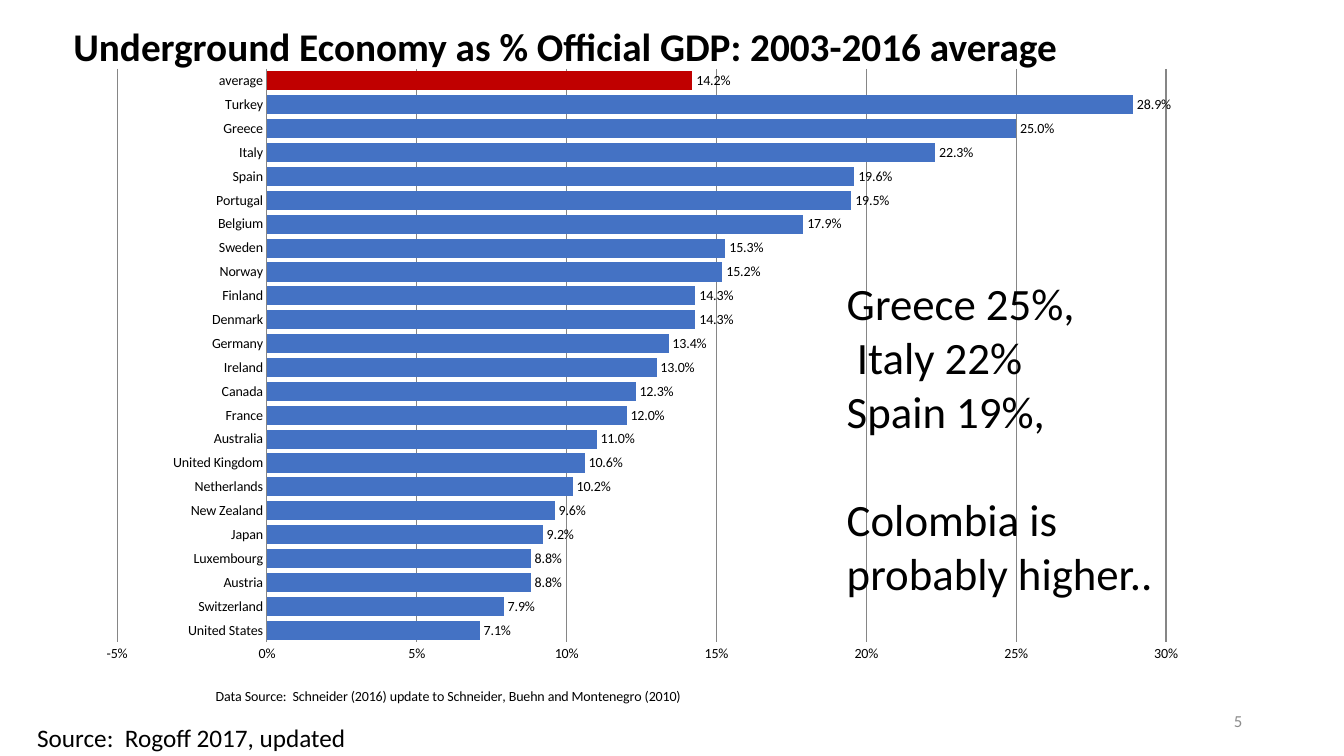
"""Build the slide on the underground economy as a share of official GDP."""
import dataclasses

import lxml.etree
import pptx
import pptx.chart.data
import pptx.dml.color
import pptx.enum.chart
import pptx.enum.text
import pptx.oxml.ns
import pptx.util

SHARES = {
    "United States": 0.071, "Switzerland": 0.079, "Austria": 0.088,
    "Luxembourg": 0.088, "Japan": 0.092, "New Zealand": 0.096,
    "Netherlands": 0.102, "United Kingdom": 0.106, "Australia": 0.11,
    "France": 0.12, "Canada": 0.123, "Ireland": 0.13, "Germany": 0.134,
    "Denmark": 0.143, "Finland": 0.143, "Norway": 0.152, "Sweden": 0.153,
    "Belgium": 0.179, "Portugal": 0.195, "Spain": 0.196, "Italy": 0.223,
    "Greece": 0.25, "Turkey": 0.289, "average": 0.142,
}


@dataclasses.dataclass(frozen=True)
class Theme:
    font: str = "Calibri"
    ink: str = "000000"
    muted: str = "8C8C8C"
    grid: str = "868686"
    bar: str = "4472C4"
    highlight: str = "C00000"
    heading: int = 28
    remark: int = 32
    source: int = 18
    number: int = 12
    chart: int = 10


def rgb(value):
    return pptx.dml.color.RGBColor.from_string(value)


def px(length):
    return pptx.util.Emu(length * 9144)


def format_font(font, theme, size, color, bold=False):
    font.name = theme.font
    font.size = pptx.util.Pt(size)
    font.color.rgb = rgb(color)
    font.bold = bold


def write(paragraph, text, theme, size, color=None, bold=False, align=None, before=0):
    run = paragraph.add_run()
    run.text = text
    format_font(run.font, theme, size, color or theme.ink, bold)
    paragraph.alignment = align
    paragraph.space_before = pptx.util.Pt(before)


def place(parent, index, **measures):
    qn = pptx.oxml.ns.qn
    for old in parent.findall(qn("c:layout")):
        parent.remove(old)
    layout = lxml.etree.Element(qn("c:layout"))
    manual = lxml.etree.SubElement(layout, qn("c:manualLayout"))
    for tag, value in measures.items():
        lxml.etree.SubElement(manual, qn(f"c:{tag}")).set("val", str(value))
    parent.insert(index, layout)


class SlideBuilder:
    def __init__(self, slide, theme):
        self.slide = slide
        self.theme = theme

    def text(self, box, lines, wrap=True, anchor=pptx.enum.text.MSO_ANCHOR.TOP, **style):
        frame = self.slide.shapes.add_textbox(*map(px, box)).text_frame
        frame.word_wrap = wrap
        frame.vertical_anchor = anchor
        for index, (line, before) in enumerate(lines):
            paragraph = frame.add_paragraph() if index else frame.paragraphs[0]
            write(paragraph, line, self.theme, before=before, **style)

    def bars(self, box, shares, caption):
        theme = self.theme
        data = pptx.chart.data.CategoryChartData(number_format="0.0%")
        data.categories = list(shares)
        data.add_series("Series 1", list(shares.values()))
        kind = pptx.enum.chart.XL_CHART_TYPE.BAR_CLUSTERED
        chart = self.slide.shapes.add_chart(kind, *map(px, box), data).chart
        format_font(chart.font, theme, theme.chart, theme.ink)
        chart.has_legend = False
        chart.has_title = False
        self.plot(chart.plots[0], list(shares).index("average"))
        self.axes(chart, caption)
        place(chart.value_axis._element.getparent(), 0, layoutTarget="inner",
              xMode="edge", yMode="edge", x=0.029, y=0.019, w=0.939, h=0.867)

    def plot(self, plot, highlighted):
        theme = self.theme
        plot.gap_width = 25
        plot.overlap = -25
        plot.vary_by_categories = False
        series = plot.series[0]
        series.invert_if_negative = False
        for part, color in ((series, theme.bar),
                            (series.points[highlighted], theme.highlight)):
            part.format.fill.solid()
            part.format.fill.fore_color.rgb = rgb(color)
        labels = series.data_labels
        labels.show_value = True
        labels.number_format = "0.0%"
        labels.number_format_is_linked = False
        labels.position = pptx.enum.chart.XL_LABEL_POSITION.OUTSIDE_END
        format_font(labels.font, theme, theme.chart, theme.ink)

    def axes(self, chart, caption):
        theme = self.theme
        countries, percent = chart.category_axis, chart.value_axis
        for axis in (countries, percent):
            axis.major_tick_mark = pptx.enum.chart.XL_TICK_MARK.NONE
            axis.minor_tick_mark = pptx.enum.chart.XL_TICK_MARK.NONE
            format_font(axis.tick_labels.font, theme, theme.chart, theme.ink)
        percent.minimum_scale = -0.05
        percent.maximum_scale = 0.3
        percent.major_unit = 0.05
        percent.has_major_gridlines = True
        percent.tick_labels.number_format = "0%"
        percent.tick_labels.number_format_is_linked = False
        percent.format.line.fill.background()
        for line in (countries.format.line, percent.major_gridlines.format.line):
            line.color.rgb = rgb(theme.grid)
            line.width = pptx.util.Pt(0.75)
        title = percent.axis_title
        write(title.text_frame.paragraphs[0], caption, theme, theme.chart)
        place(title._element, 1, xMode="edge", yMode="edge", x=0.115, y=0.95)


def main():
    deck = pptx.Presentation()
    deck.slide_width, deck.slide_height = px(1333), px(750)
    theme = Theme()
    builder = SlideBuilder(deck.slides.add_slide(deck.slide_layouts[6]), theme)
    builder.bars(
        (84, 56, 1108, 656), SHARES,
        "Data Source:  Schneider (2016) update to Schneider, Buehn and Montenegro (2010)")
    builder.text(
        (63, 17, 1162, 59),
        [("Underground Economy as % Official GDP: 2003-2016 average", 0)],
        size=theme.heading, bold=True)
    builder.text(
        (830, 269, 344, 333),
        [("Greece 25%,", 0), (" Italy 22%", 0), ("Spain 19%,", 0),
         ("Colombia is probably higher..", 39)],
        size=theme.remark)
    builder.text((27, 712, 330, 40), [("Source:  Rogoff 2017, updated", 0)],
                 wrap=False, size=theme.source)
    builder.text((942, 695, 300, 40), [("5", 0)], size=theme.number, color=theme.muted,
                 anchor=pptx.enum.text.MSO_ANCHOR.MIDDLE,
                 align=pptx.enum.text.PP_ALIGN.RIGHT)
    deck.save("out.pptx")


if __name__ == "__main__":
    main()
